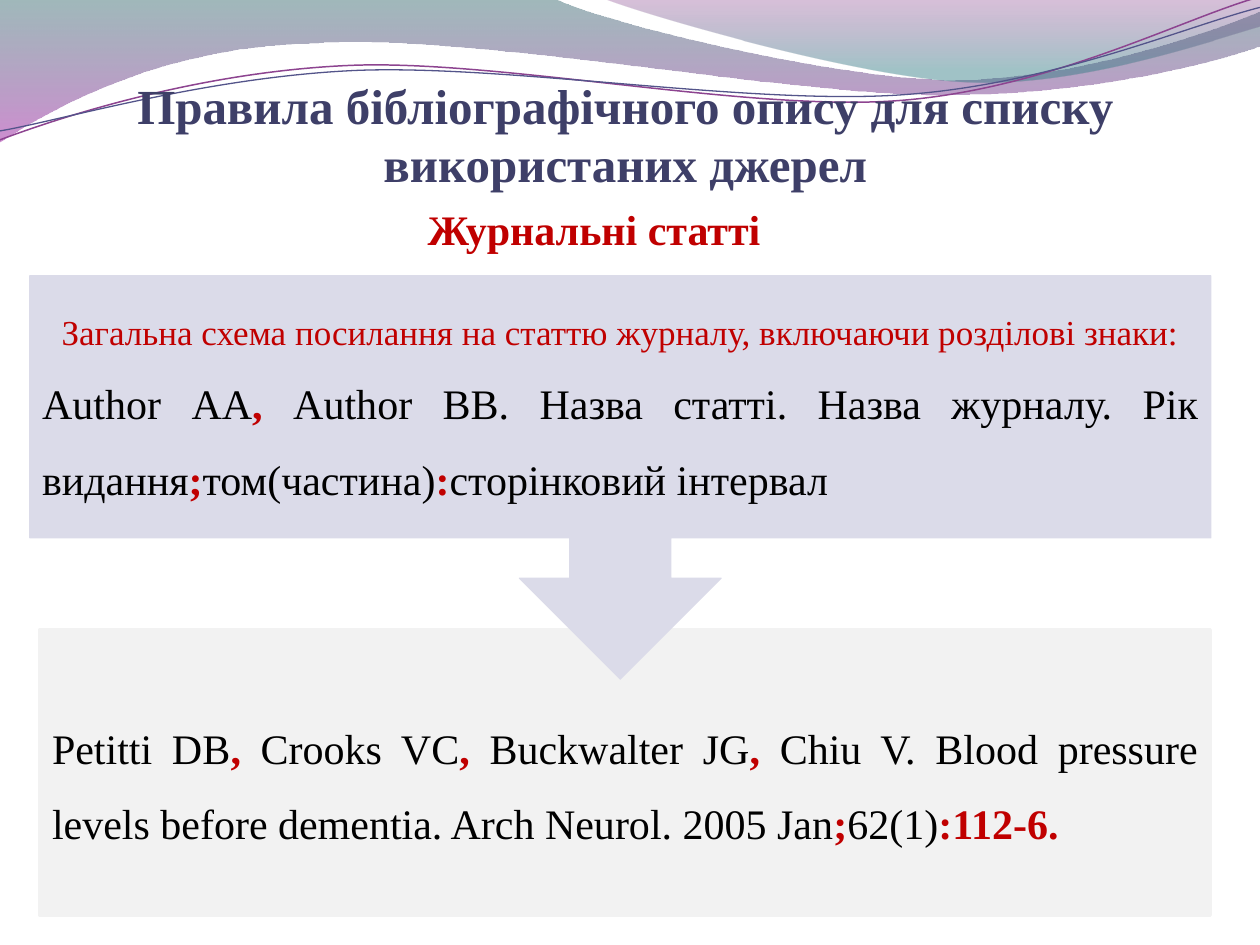
from lxml import etree
from pptx import Presentation, util as u
from pptx.dml.color import RGBColor
from pptx.enum import shapes, text
from pptx.oxml.ns import qn

THEME = {
    "font": "Times New Roman", "title": 28, "body": 24, "lead": 20,
    "navy": "3E3F68", "red": "C00000", "black": "000000",
    "lavender": "DBDBE9", "grey": "F2F2F2", "purple": "8D4490", "indigo": "53548A",
}
CENTER, JUSTIFY = text.PP_ALIGN.CENTER, text.PP_ALIGN.JUSTIFY

WAVES = [
    {"stops": [(0, "2D6368", 45), (1, "A530A9", 55)], "start": (0, 0), "steps": [
        [(11.18, -0.03)],
        [(12.09, 0.43), (16.87, 1.6), (19.25, 1.6)],
        [(21.67, 1.6), (24.33, 0.66), (25.4, 0.23)],
        [(25.43, 0.91)],
        [(24.97, 1.12), (22.1, 1.93), (18.95, 1.91)],
        [(15.8, 1.91), (9.7, 0.71), (6.53, 0.86)],
        [(3.28, 0.91), (1.17, 2.11), (-0.03, 2.87)]]},
    {"stops": [(0, "7F2F82", 30), (0.8, "2F7B82", 45)], "start": (12.17, -0.03), "steps": [
        [(12.93, 0.28), (17.32, 1.57), (19.53, 1.65)],
        [(21.74, 1.75), (24.41, 0.81), (25.4, 0.53)],
        [(25.4, 0)]]},
    {"line": ("purple", 0.85), "start": (0, 2.82), "steps": [
        [(1.22, 2.36), (4.01, 1.45), (7.04, 1.32)],
        [(10.03, 1.19), (15.06, 2.26), (18.11, 2.03)],
        [(21.16, 1.8), (23.83, 0.38), (25.35, -0.05)]]},
    {"line": ("indigo", 0.75), "start": (0, 2.64), "steps": [
        [(1.19, 2.44), (4.17, 1.55), (7.19, 1.42)],
        [(10.24, 1.3), (15.16, 2.13), (18.21, 1.91)],
        [(21.23, 1.7), (23.9, 0.53), (25.4, 0.15)]]},
]

TITLE = [(CENTER, "title", "navy",
          ["Правила бібліографічного опису для списку використаних джерел"])]
SUBTITLE = [(CENTER, "body", "red", ["Журнальні статті"])]
SCHEME = [
    (CENTER, "lead", "red",
     ["Загальна схема посилання на статтю журналу, включаючи розділові знаки:"]),
    (JUSTIFY, "body", "black",
     ["Author АА", ", ", "Author ВВ. Назва статті. Назва журналу. Рік видання", ";",
      "том(частина)", ":", "сторінковий інтервал "]),
]
EXAMPLE = [(JUSTIFY, "body", "black",
            ["Petitti DB", ",", " Crooks VC", ", ", "Buckwalter JG", ",",
             " Chiu V. Blood pressure levels before dementia. Arch Neurol. 2005 Jan",
             ";", "62(1)", ":112-6."])]

HEADINGS = [((1.39, 1.39, 22.43, 2.64), TITLE, True), ((8.33, 3.97, 7.29, 1.27), SUBTITLE, False)]
BLOCKS = [
    (shapes.MSO_SHAPE.RECTANGLE, (0.8, 12.7, 23.6, 5.75), "grey", 2, 0.13, EXAMPLE),
    (shapes.MSO_SHAPE.DOWN_ARROW_CALLOUT, (0.6, 5.56, 23.81, 8.13), "lavender", 0.75, 0.53,
     SCHEME),
]


def rgb(name):
    return RGBColor.from_string(THEME.get(name, name))


def add_ribbon(slide, start, steps, close):
    points = [(u.Cm(x), u.Cm(y)) for x, y in [start, *sum(steps, [])]]
    builder = slide.shapes.build_freeform(*points[0])
    builder.add_line_segments(points[1:], close=close)
    ribbon = builder.convert_to_shape()
    segments = iter(list(ribbon._element.spPr.iter(qn("a:lnTo"))))
    for step in steps:
        parts = [next(segments) for _ in step]
        if len(parts) == 3:
            curve = etree.Element(qn("a:cubicBezTo"))
            parts[0].addprevious(curve)
            for part in parts:
                curve.append(part[0])
                part.getparent().remove(part)
    return ribbon


def add_wave(slide, wave):
    ribbon = add_ribbon(slide, wave["start"], wave["steps"], "stops" in wave)
    ribbon.shadow.inherit = False
    if "line" in wave:
        colour, width = wave["line"]
        ribbon.fill.background()
        ribbon.line.color.rgb, ribbon.line.width = rgb(colour), u.Pt(width)
        return
    ribbon.line.fill.background()
    ribbon.fill.gradient()
    ribbon.fill.gradient_angle = 270
    for stop, (position, colour, _) in zip(ribbon.fill.gradient_stops, wave["stops"]):
        stop.position, stop.color.rgb = position, rgb(colour)
    colours = ribbon._element.spPr.iter(qn("a:srgbClr"))
    for colour, (_, _, opacity) in zip(list(colours), wave["stops"]):
        etree.SubElement(colour, qn("a:alpha")).set("val", str(opacity * 1000))


def write(frame, content, spacing=None):
    for i, (align, size, base, pieces) in enumerate(content):
        line = frame.add_paragraph() if i else frame.paragraphs[0]
        line.alignment, line.line_spacing = align, spacing
        for j, piece in enumerate(pieces):
            run = line.add_run()
            run.text = piece
            run.font.name, run.font.size = THEME["font"], u.Pt(THEME[size])
            run.font.bold = bool(j % 2) or spacing is None
            run.font.color.rgb = rgb("red" if j % 2 else base)


def add_block(slide, kind, box, colour, border, bottom, content):
    block = slide.shapes.add_shape(kind, *map(u.Cm, box))
    block.shadow.inherit = False
    block.fill.solid()
    block.fill.fore_color.rgb = block.line.color.rgb = rgb(colour)
    block.line.width = u.Pt(border)
    frame = block.text_frame
    frame.word_wrap, frame.margin_bottom = True, u.Cm(bottom)
    frame.vertical_anchor = text.MSO_ANCHOR.MIDDLE
    write(frame, content, 1.5)


def add_heading(slide, box, content, wrap):
    heading = slide.shapes.add_textbox(*map(u.Cm, box)).text_frame
    heading.word_wrap = wrap
    heading.auto_size = text.MSO_AUTO_SIZE.SHAPE_TO_FIT_TEXT
    write(heading, content)


def main():
    """Build the slide on citing journal articles."""
    deck = Presentation()
    deck.slide_width, deck.slide_height = u.Cm(25.4), u.Cm(19.05)
    slide = deck.slides.add_slide(deck.slide_layouts[6])
    for wave in WAVES:
        add_wave(slide, wave)
    example, scheme = BLOCKS
    add_block(slide, *example)
    for heading in HEADINGS:
        add_heading(slide, *heading)
    add_block(slide, *scheme)
    deck.save("out.pptx")


if __name__ == "__main__":
    main()
